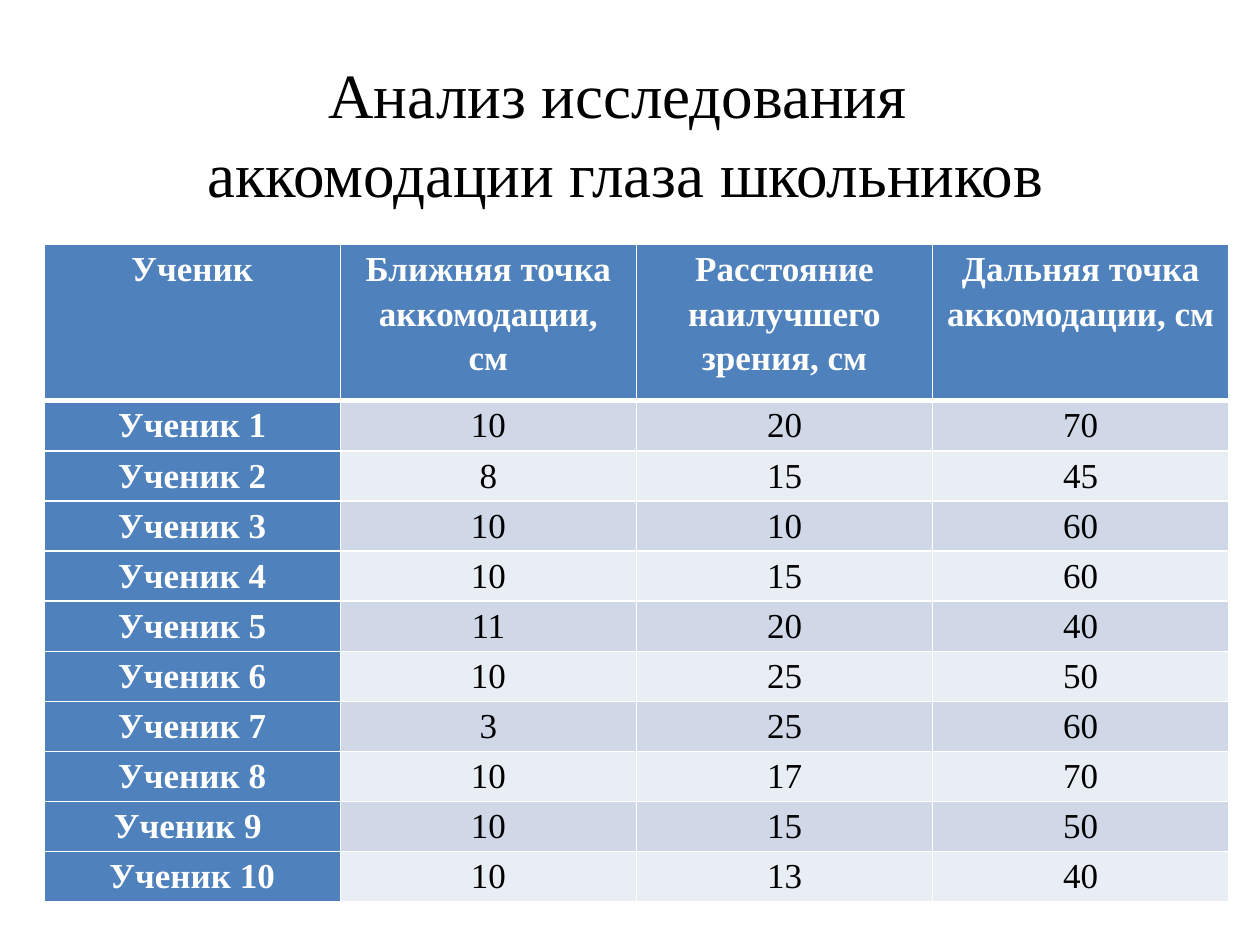
from lxml import etree
from pptx import Presentation
from pptx import util as u
from pptx.dml.color import RGBColor
from pptx.enum import text
from pptx.oxml import ns

WHITE = RGBColor(0xFF, 0xFF, 0xFF)
BLACK = RGBColor(0, 0, 0)
BLUE = RGBColor(0x4F, 0x81, 0xBD)
BANDS = RGBColor(0xD0, 0xD8, 0xE8), RGBColor(0xE9, 0xED, 0xF4)
FONT = "Times New Roman"

TITLE = ["Анализ исследования ", "аккомодации глаза школьников"]
HEADS = [
    ["Ученик"],
    ["Ближняя точка аккомодации,", "см"],
    ["Расстояние наилучшего зрения, см"],
    ["Дальняя точка аккомодации, см"],
]
PUPILS = [
    ("Ученик 1", 10, 20, 70),
    ("Ученик 2", 8, 15, 45),
    ("Ученик 3", 10, 10, 60),
    ("Ученик 4", 10, 15, 60),
    ("Ученик 5", 11, 20, 40),
    ("Ученик 6", 10, 25, 50),
    ("Ученик 7", 3, 25, 60),
    ("Ученик 8", 10, 17, 70),
    ("Ученик 9 ", 10, 15, 50),
    ("Ученик 10", 10, 13, 40),
]
LEFT, TOP = 0.89, 4.93
COL, HEAD, ROW = 5.97, 3.15, 1.01


def write(frame, lines, size=20, color=BLACK, bold=False, space=1.15):
    frame.word_wrap = True
    for i, line in enumerate(lines):
        para = frame.paragraphs[0] if i == 0 else frame.add_paragraph()
        para.alignment = text.PP_ALIGN.CENTER
        para.line_spacing = space
        run = para.add_run()
        run.text = line
        font = run.font
        font.name, font.size, font.bold = FONT, u.Pt(size), bold
        font.color.rgb = color


def edge(cell, side, width):
    """Draw a white border on one side (L, R, T or B) of a cell."""
    props = cell._tc.get_or_add_tcPr()
    line = etree.SubElement(props, ns.qn("a:ln" + side), w=str(u.Pt(width)))
    fill = etree.SubElement(line, ns.qn("a:solidFill"))
    etree.SubElement(fill, ns.qn("a:srgbClr"), val=str(WHITE))


def style(cell, row, col):
    """Set the insets, borders and fill that a cell's place calls for."""
    cell.margin_left = cell.margin_right = u.Cm(0.18)
    cell.margin_top = cell.margin_bottom = 0
    for side in "LRTB":
        thick = (row, side) in ((0, "B"), (1, "T"))
        edge(cell, side, 3 if thick else 1)
    cell.fill.solid()
    label = row == 0 or col == 0
    cell.fill.fore_color.rgb = BLUE if label else BANDS[(row - 1) % 2]


def main():
    deck = Presentation()
    deck.slide_width, deck.slide_height = u.Cm(25.4), u.Cm(19.05)
    slide = deck.slides.add_slide(deck.slide_layouts[6])

    rows = [HEADS] + [[[str(item)] for item in pupil] for pupil in PUPILS]
    table = slide.shapes.add_table(
        len(rows), len(HEADS), u.Cm(LEFT), u.Cm(TOP),
        u.Cm(COL * len(HEADS)), u.Cm(HEAD + ROW * len(PUPILS))).table
    table.first_col = True
    for col in table.columns:
        col.width = u.Cm(COL)
    for r, row in enumerate(rows):
        table.rows[r].height = u.Cm(ROW if r else HEAD)
        for c, lines in enumerate(row):
            cell = table.cell(r, c)
            style(cell, r, c)
            label = r == 0 or c == 0
            write(cell.text_frame, lines, bold=label,
                  color=WHITE if label else BLACK)

    title = slide.shapes.add_textbox(
        u.Cm(0.71), u.Cm(0.91), u.Cm(23.8), u.Cm(3.33))
    write(title.text_frame, TITLE, size=36, space=1.05)
    title.text_frame.auto_size = text.MSO_AUTO_SIZE.SHAPE_TO_FIT_TEXT

    deck.save("out.pptx")


if __name__ == "__main__":
    main()
